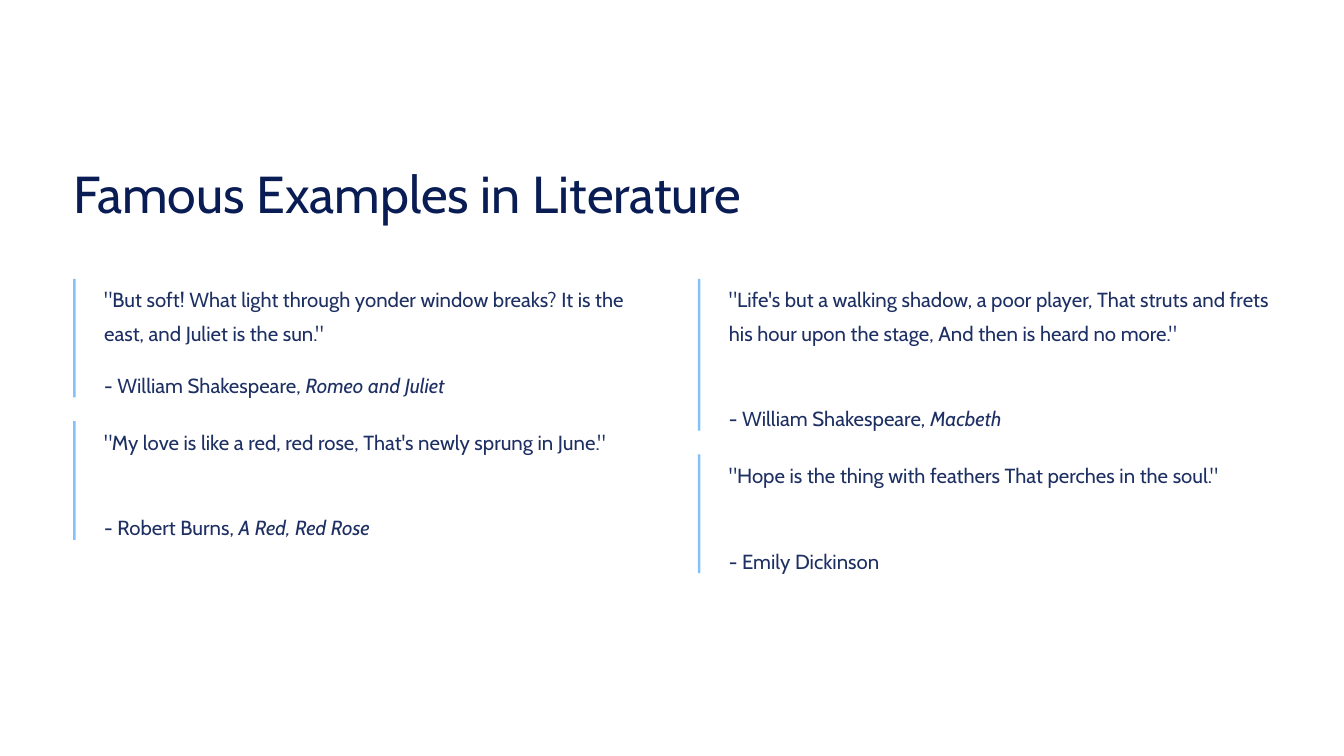
"""Build a slide of literary quotations in two columns."""
import pptx
import pptx.dml.color
import pptx.enum.shapes
import pptx.enum.text
import pptx.util
from dataclasses import dataclass

Pt = pptx.util.Pt

TITLE = "Famous Examples in Literature"
COLUMNS = [
    [
        ('"But soft! What light through yonder window breaks? It is the east, and Juliet is the sun."',
         "- William Shakespeare, ", "Romeo and Juliet", 2),
        ('"My love is like a red, red rose, That\'s newly sprung in June."',
         "- Robert Burns, ", "A Red, Red Rose", 2),
    ],
    [
        ('"Life\'s but a walking shadow, a poor player, That struts and frets his hour upon the stage, '
         'And then is heard no more."',
         "- William Shakespeare, ", "Macbeth", 3),
        ('"Hope is the thing with feathers That perches in the soul."',
         "- Emily Dickinson", "", 2),
    ],
]


@dataclass(frozen=True)
class Theme:
    """Colours, font and type sizes."""
    font: str = "Cabin"
    background: str = "FFFFFF"
    title: str = "091C53"
    body: str = "1E3063"
    accent: str = "84C1FA"
    title_size: float = 44.5
    title_line: float = 55.5
    body_size: float = 17.5
    body_line: float = 28.5


THEME = Theme()
LEFT, TOP = 62.64, 239
COLUMN_STEP = 535.5
INDENT, QUOTE_WIDTH = 26.64, 465
BAR_WIDTH = 2.25
SOURCE_GAP, QUOTE_GAP = 16.25, 20.25


def rgb(value):
    """Return a colour from its hex value."""
    return pptx.dml.color.RGBColor.from_string(value)


def place(shape, left, top, width, height):
    """Set the position and size of a shape in points."""
    shape.left, shape.top, shape.width, shape.height = map(Pt, (left, top, width, height))


def format_text(frame, size, line, color):
    """Give a text frame its margins, line spacing and font."""
    frame.margin_left = frame.margin_right = frame.margin_top = frame.margin_bottom = 0
    frame.word_wrap = True
    frame.auto_size = pptx.enum.text.MSO_AUTO_SIZE.NONE
    frame.vertical_anchor = pptx.enum.text.MSO_ANCHOR.TOP
    for paragraph in frame.paragraphs:
        paragraph.alignment = pptx.enum.text.PP_ALIGN.LEFT
        paragraph.line_spacing = Pt(line)
        for run in paragraph.runs:
            run.font.name = THEME.font
            run.font.size = Pt(size)
            run.font.color.rgb = rgb(color)


def add_text(slide, left, top, height, text, work=""):
    """Add body text, followed by an italic work title if there is one."""
    box = slide.shapes.add_textbox(Pt(left), Pt(top), Pt(QUOTE_WIDTH), Pt(height))
    frame = box.text_frame
    frame.text = text
    if work:
        run = frame.paragraphs[0].add_run()
        run.text = work
        run.font.italic = True
    format_text(frame, THEME.body_size, THEME.body_line, THEME.body)


def add_quote(slide, left, top, quote, author, work, lines):
    """Add a quotation with its source and bar, and return its height."""
    quote_height = lines * THEME.body_line
    source_top = quote_height + SOURCE_GAP
    height = source_top + THEME.body_line
    add_text(slide, left + INDENT, top, quote_height, quote)
    add_text(slide, left + INDENT, top + source_top, THEME.body_line, author, work)
    bar = slide.shapes.add_shape(
        pptx.enum.shapes.MSO_SHAPE.RECTANGLE, Pt(left), Pt(top), Pt(BAR_WIDTH), Pt(height))
    bar.shadow.inherit = False
    bar.fill.solid()
    bar.fill.fore_color.rgb = rgb(THEME.accent)
    bar.line.fill.background()
    return height


def main():
    """Build and save the slide."""
    deck = pptx.Presentation()
    deck.slide_width, deck.slide_height = Pt(1152), Pt(648)
    slide = deck.slides.add_slide(deck.slide_layouts.get_by_name("Title Only"))
    slide.background.fill.solid()
    slide.background.fill.fore_color.rgb = rgb(THEME.background)

    title = slide.shapes.title
    place(title, LEFT, 136.8, 644.4, THEME.title_line)
    title.text_frame.text = TITLE
    format_text(title.text_frame, THEME.title_size, THEME.title_line, THEME.title)

    for index, quotes in enumerate(COLUMNS):
        top = TOP
        for quote in quotes:
            top += add_quote(slide, LEFT + index * COLUMN_STEP, top, *quote) + QUOTE_GAP

    deck.save("out.pptx")


if __name__ == "__main__":
    main()
